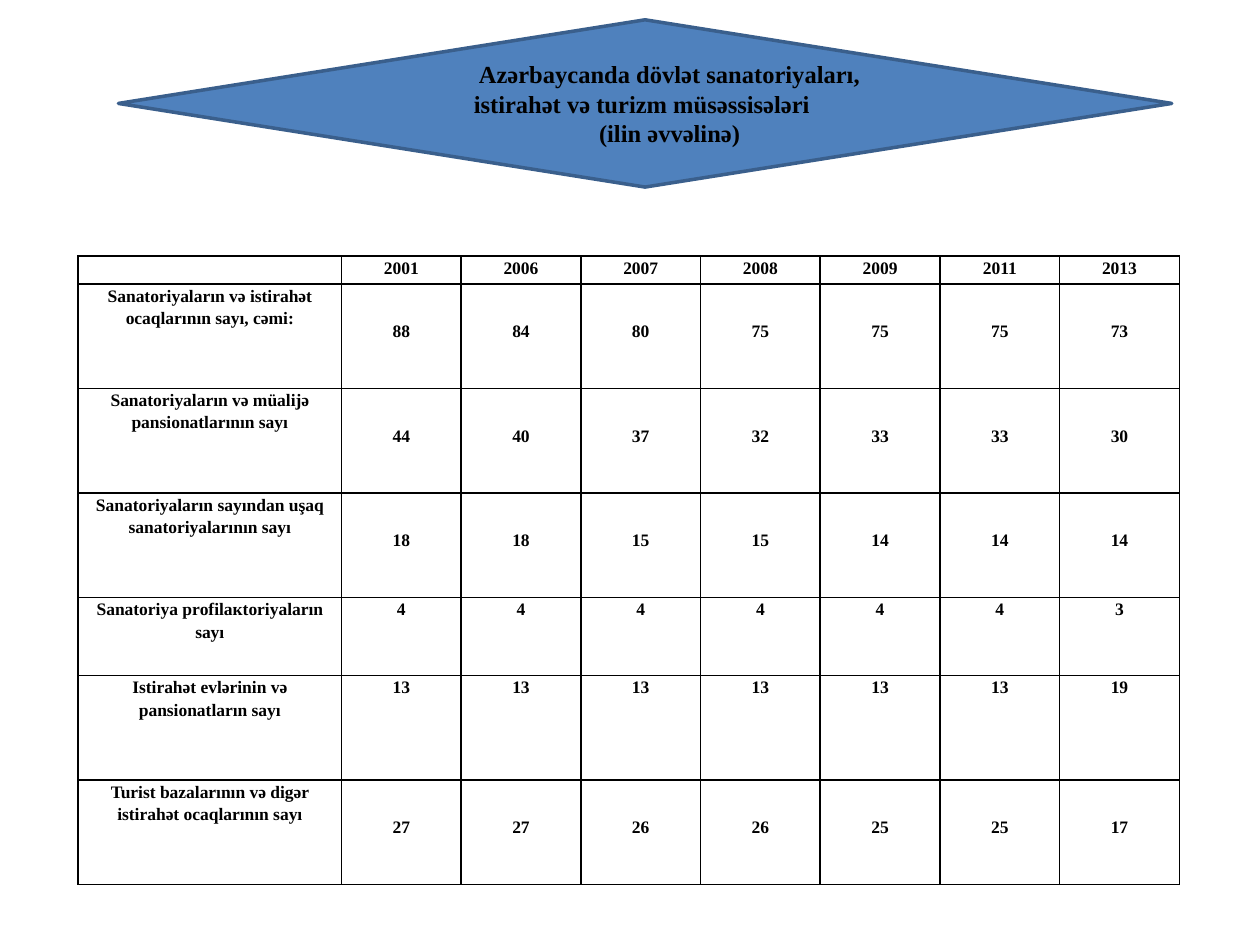
from dataclasses import dataclass

from lxml.etree import SubElement
from pptx import Presentation
from pptx.dml.color import RGBColor
from pptx.enum.shapes import MSO_SHAPE
from pptx.enum.text import MSO_ANCHOR, PP_ALIGN
from pptx.oxml.ns import qn
from pptx.util import Inches, Pt

WIDTH, HEIGHT = 10, 7.5
FONT = "Times New Roman"
BLACK, BLUE, DARK_BLUE = "000000", "4F81BD", "3A5F8C"
LABEL_COL, YEAR_COL = 2.09, 0.95
HEADER_ROW, TALL_ROW, SHORT_ROW = 0.22, 0.83, 0.62
NUMBER_DROP = 0.28

TITLE = (
    "Аzərbаycаndа dövlət sаnаtоriyаlаrı, istirаhət və turizm müsəssisələri ",
    "(ilin əvvəlinə)",
)


@dataclass
class Row:
    label: str
    values: tuple
    height: float = TALL_ROW
    drop: float = NUMBER_DROP  # inches the numbers sit below the top of the row


ROWS = (
    Row("", (2001, 2006, 2007, 2008, 2009, 2011, 2013), HEADER_ROW, 0),
    Row("Sаnаtоriyаlаrın və istirаhət оcаqlаrının sаyı, cəmi:", (88, 84, 80, 75, 75, 75, 73)),
    Row("Sаnаtоriyаlаrın və müаlijə pаnsiоnаtlаrının sаyı", (44, 40, 37, 32, 33, 33, 30)),
    Row("Sаnаtоriyаlаrın sаyındаn uşаq sаnаtоriyаlаrının sаyı", (18, 18, 15, 15, 14, 14, 14)),
    Row("Sаnаtоriyа prоfilакtоriyаlаrın sаyı", (4, 4, 4, 4, 4, 4, 3), SHORT_ROW, 0),
    Row("Istirаhət еvlərinin və pаnsiоnаtlаrın sаyı", (13, 13, 13, 13, 13, 13, 19), drop=0),
    Row("Turist bаzаlаrının və digər istirаhət оcаqlаrının sаyı", (27, 27, 26, 26, 25, 25, 17)),
)


def color(value: str) -> RGBColor:
    return RGBColor.from_string(value)


def share_x(share: float) -> int:
    return Inches(WIDTH * share)


def share_y(share: float) -> int:
    return Inches(HEIGHT * share)


def set_all(obj, values: dict) -> None:
    for name, value in values.items():
        setattr(obj, name, value)


def write(p, text: str, size: float, **layout) -> None:
    set_all(p, {"alignment": PP_ALIGN.CENTER, **layout})
    if not text:
        SubElement(p._p, qn("a:endParaRPr"), sz=str(size * 100))
        return
    r = p.add_run()
    r.text = text
    set_all(r.font, {"name": FONT, "size": Pt(size), "bold": True})
    r.font.color.rgb = color(BLACK)


def add_borders(cell, width: float = 1) -> None:
    """Insert the four border lines ahead of the cell's fill, as the schema asks."""
    tc_pr = cell._tc.get_or_add_tcPr()
    for i, side in enumerate(("a:lnL", "a:lnR", "a:lnT", "a:lnB")):
        ln = SubElement(tc_pr, qn(side), w=str(Pt(width)))
        fill = SubElement(ln, qn("a:solidFill"))
        SubElement(fill, qn("a:srgbClr"), val=BLACK)
        tc_pr.insert(i, ln)


def fill_cell(cell, text: str, drop: float = 0) -> None:
    set_all(cell, {
        "margin_left": Inches(0.05), "margin_right": Inches(0.05),
        "margin_top": Inches(drop), "margin_bottom": 0,
        "vertical_anchor": MSO_ANCHOR.TOP,
    })
    cell.fill.background()
    add_borders(cell)
    write(cell.text_frame.paragraphs[0], text, 10, line_spacing=1.15, space_after=Pt(10))


def add_statistics(s) -> None:
    years = len(ROWS[0].values)
    widths = [LABEL_COL] + [YEAR_COL] * years
    table = s.shapes.add_table(
        len(ROWS), len(widths), share_x(0.062), share_y(0.271),
        Inches(sum(widths)), Inches(sum(row.height for row in ROWS)),
    ).table
    set_all(table, {"first_row": False, "horz_banding": False})
    for column, width in zip(table.columns, widths):
        column.width = Inches(width)
    for i, row in enumerate(ROWS):
        table.rows[i].height = Inches(row.height)
        fill_cell(table.cell(i, 0), row.label)
        for j, value in enumerate(row.values, start=1):
            fill_cell(table.cell(i, j), str(value), row.drop)


def add_title(s) -> None:
    sp = s.shapes.add_shape(
        MSO_SHAPE.FLOWCHART_DECISION,
        share_x(0.094), share_y(0.021), share_x(0.836), share_y(0.177),
    )
    sp.shadow.inherit = False
    sp.fill.solid()
    sp.fill.fore_color.rgb = color(BLUE)
    sp.line.color.rgb = color(DARK_BLUE)
    sp.line.width = Pt(2)
    tf = sp.text_frame
    set_all(tf, {"word_wrap": True, "vertical_anchor": MSO_ANCHOR.MIDDLE})
    for i, text in enumerate(TITLE):
        p = tf.add_paragraph() if i else tf.paragraphs[0]
        write(p, text, 14)
        p._p.get_or_add_pPr().set("indent", str(Inches(0.39)))


def main() -> None:
    prs = Presentation()
    set_all(prs, {"slide_width": Inches(WIDTH), "slide_height": Inches(HEIGHT)})
    s = prs.slides.add_slide(prs.slide_layouts[6])
    add_statistics(s)
    add_title(s)
    prs.save("out.pptx")


if __name__ == "__main__":
    main()
